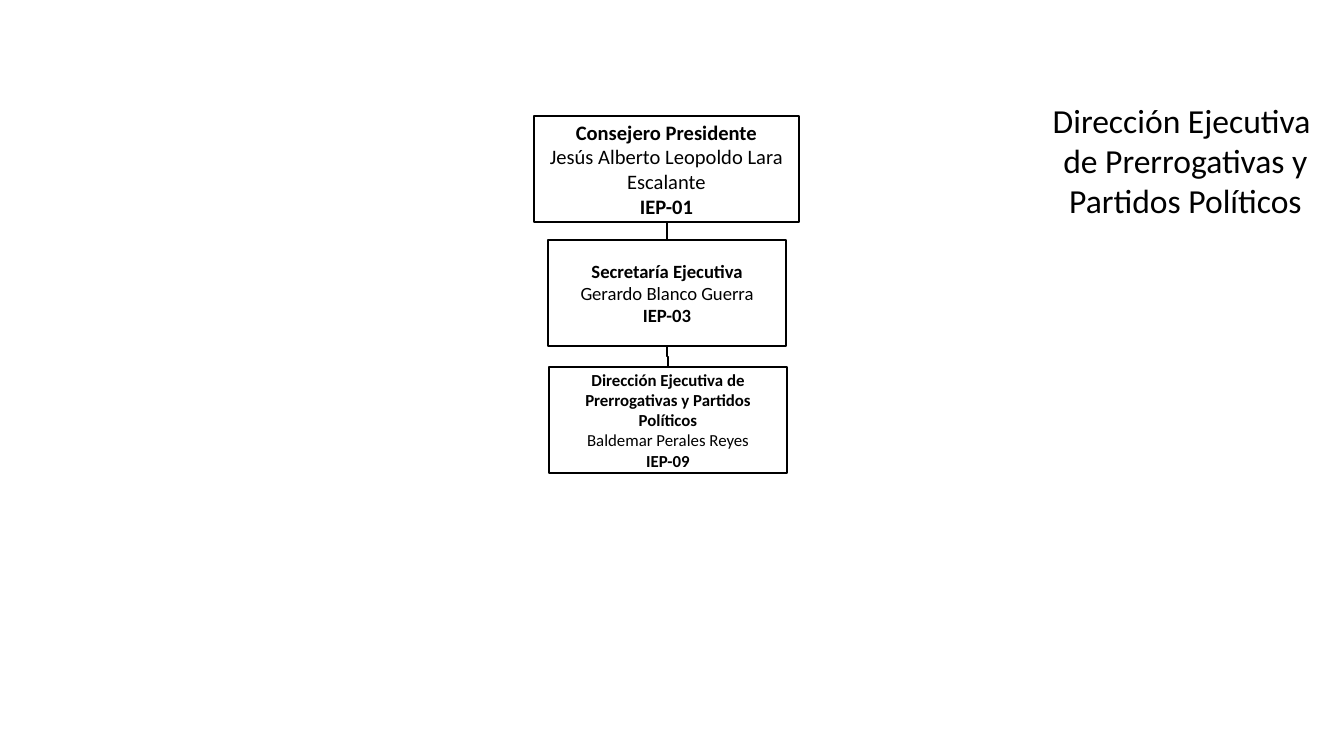
import itertools

import pptx
import pptx.dml.color
import pptx.enum.shapes
import pptx.enum.text
import pptx.oxml.ns
import pptx.util
from lxml import etree

# Content
TITLE = ["Dirección Ejecutiva ", " de Prerrogativas y ", "Partidos Políticos"]
POSTS = [  # role, holder, code, text size, left, top, width
    ("Consejero Presidente", "Jesús Alberto Leopoldo Lara Escalante", "IEP-01", 11, 534, 116, 265),
    ("Secretaría Ejecutiva", "Gerardo Blanco Guerra", "IEP-03", 10, 548, 240, 238),
    ("Dirección Ejecutiva de Prerrogativas y Partidos Políticos", "Baldemar Perales Reyes",
     "IEP-09", 9, 549, 367, 238),
]

# Theme and layout, lengths in px
THEME = {
    "ink": pptx.dml.color.RGBColor(0, 0, 0),
    "font": "Calibri",
    "title_size": 18,
    "line_width": 1,
}
SLIDE_SIZE = (1344, 756)
TITLE_BOX = (1027, 93, 317, 136)
POST_HEIGHT = 106
EMU_PER_PX = 914400 / 134.4


def px(*lengths):
    return [pptx.util.Emu(round(length * EMU_PER_PX)) for length in lengths]


def apply_format(target, values):
    for name, value in values.items():
        setattr(target, name, value)


def write_lines(frame, lines, size):
    """Write centred (text, bold) lines, one paragraph each."""
    frame.word_wrap = True
    for index, (text, bold) in enumerate(lines):
        paragraph = frame.add_paragraph() if index else frame.paragraphs[0]
        paragraph.alignment = pptx.enum.text.PP_ALIGN.CENTER
        run = paragraph.add_run()
        run.text = text
        apply_format(run.font, {"name": THEME["font"], "size": pptx.util.Pt(size), "bold": bold})
        run.font.color.rgb = THEME["ink"]


def draw_outline(line):
    line.color.rgb = THEME["ink"]
    line.width = pptx.util.Pt(THEME["line_width"])


def add_post(slide, post):
    role, holder, code, size, left, top, width = post
    shape = slide.shapes.add_shape(
        pptx.enum.shapes.MSO_SHAPE.RECTANGLE, *px(left, top, width, POST_HEIGHT))
    shape.shadow.inherit = False
    shape.fill.background()
    draw_outline(shape.line)
    shape.text_frame.vertical_anchor = pptx.enum.text.MSO_ANCHOR.MIDDLE
    write_lines(shape.text_frame, [(role, True), (holder, False), (code, True)], size)


def add_link(slide, upper, lower):
    """Join two posts with an elbow that leaves downwards (a flipped elbow turned 270°)."""
    start_x, end_x = (left + width / 2 for *_, left, _, width in (upper, lower))
    start_y, end_y = upper[5] + POST_HEIGHT, lower[5]
    middle_x, middle_y = (start_x + end_x) / 2, (start_y + end_y) / 2
    half_run, half_rise = (end_y - start_y) / 2, (end_x - start_x) / 2
    connector = slide.shapes.add_connector(
        pptx.enum.shapes.MSO_CONNECTOR.ELBOW,
        *px(middle_x + half_run, middle_y - half_rise, middle_x - half_run, middle_y + half_rise))
    properties = connector._element.spPr
    properties.find(pptx.oxml.ns.qn("a:xfrm")).set("rot", str(270 * 60000))
    draw_outline(connector.line)
    etree.SubElement(properties, pptx.oxml.ns.qn("a:effectLst"))


def main():
    presentation = pptx.Presentation()
    presentation.slide_width, presentation.slide_height = px(*SLIDE_SIZE)
    slide = presentation.slides.add_slide(presentation.slide_layouts[6])

    # Title
    title = slide.shapes.add_textbox(*px(*TITLE_BOX))
    write_lines(title.text_frame, [(text, False) for text in TITLE], THEME["title_size"])

    # Chain of posts
    for post in POSTS:
        add_post(slide, post)
    for upper, lower in itertools.pairwise(POSTS):
        add_link(slide, upper, lower)

    presentation.save("out.pptx")


if __name__ == "__main__":
    main()
